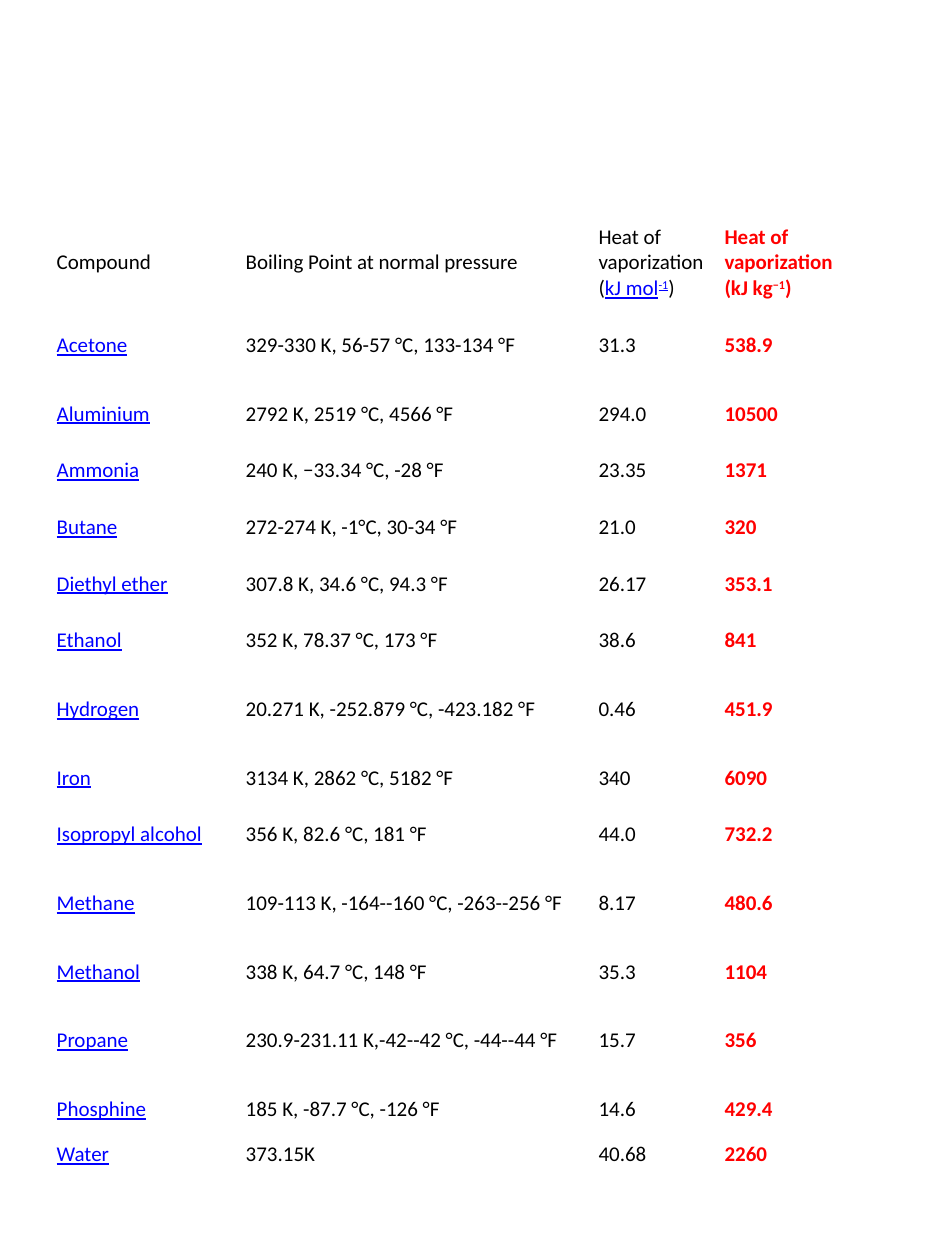
from copy import deepcopy

from pptx import Presentation
from pptx.dml.color import RGBColor
from pptx.enum.text import MSO_ANCHOR
from pptx.oxml.ns import qn
from pptx.util import Inches, Pt

COLORS = {"text": "000000", "link": "0000FF", "accent": "FF0000"}
COLUMNS = [15, 28, 10, 10]
TALL, MEDIUM, SHORT = 6.4, 4.5, 2.6
HEADER = [
    [("Compound", "text", False)],
    [("Boiling Point at normal pressure", "text", False)],
    [("Heat of vaporization\v(", "text", False), ("kJ mol", "link", False),
     ("-1", "link", True), (")", "text", False)],
    [("Heat of vaporization\v(kJ kg", "accent", False),
     ("−1", "accent", True), (")", "accent", False)],
]
COMPOUNDS = [
    (TALL, "Acetone", "329-330 K, 56-57 °C, 133-134 °F", "31.3", "538.9"),
    (MEDIUM, "Aluminium", "2792 K, 2519 °C, 4566 °F", "294.0", "10500"),
    (MEDIUM, "Ammonia", "240 K, −33.34 °C, -28 °F", "23.35", "1371"),
    (MEDIUM, "Butane", "272-274 K, -1°C, 30-34 °F", "21.0", "320"),
    (MEDIUM, "Diethyl ether", "307.8 K, 34.6 °C, 94.3 °F", "26.17", "353.1"),
    (MEDIUM, "Ethanol", "352 K, 78.37 °C, 173 °F", "38.6", "841"),
    (TALL, "Hydrogen", "20.271 K, -252.879 °C, -423.182 °F", "0.46", "451.9"),
    (MEDIUM, "Iron", "3134 K, 2862 °C, 5182 °F", "340", "6090"),
    (MEDIUM, "Isopropyl alcohol", "356 K, 82.6 °C, 181 °F", "44.0", "732.2"),
    (TALL, "Methane", "109-113 K, -164--160 °C, -263--256 °F", "8.17", "480.6"),
    (MEDIUM, "Methanol", "338 K, 64.7 °C, 148 °F", "35.3", "1104"),
    (TALL, "Propane", "230.9-231.11 K,-42--42 °C, -44--44 °F", "15.7", "356"),
    (MEDIUM, "Phosphine", "185 K, -87.7 °C, -126 °F", "14.6", "429.4"),
    (SHORT, "Water", "373.15K", "40.68", "2260"),
]


class Deck:
    """Holds the style and the current slide, on a grid of 75 columns by 100 rows."""

    def __init__(self, prs, font="Calibri", size=12):
        self.font, self.size = font, Pt(size)
        self.col, self.row = prs.slide_width / 75, prs.slide_height / 100
        self.s = prs.slides.add_slide(prs.slide_layouts[6])

    def table(self, x, y, columns, heights, rows):
        frame = self.s.shapes.add_table(
            len(rows), len(columns), int(x * self.col), int(y * self.row),
            int(sum(columns) * self.col), int(sum(heights) * self.row))
        table = frame.table
        table.first_row = table.horz_banding = False
        for column, width in zip(table.columns, columns):
            column.width = int(width * self.col)
        for row, height, contents in zip(table.rows, heights, rows):
            row.height = int(height * self.row)
            for cell, parts in zip(row.cells, contents):
                self.cell(cell, parts)

    def cell(self, cell, parts):
        cell.fill.background()
        cell.vertical_anchor = MSO_ANCHOR.MIDDLE
        cell.margin_left = cell.margin_right = Inches(0.06)
        cell.margin_top = cell.margin_bottom = Inches(0.03)
        p = cell.text_frame.paragraphs[0]
        for text, color, raised in parts:
            lines = text.split("\v")
            self.run(p, lines[0], color, raised)
            for line in lines[1:]:
                p.add_line_break()
                r = self.run(p, line, color, raised)
                br = p._p.findall(qn("a:br"))[-1]
                br.append(deepcopy(r._r.rPr))

    def run(self, p, text, color, raised):
        r = p.add_run()
        r.text = text
        r.font.name, r.font.size = self.font, self.size
        r.font.color.rgb = RGBColor.from_string(COLORS[color])
        r.font.bold = color == "accent"
        r.font.underline = color == "link"
        if raised:
            r._r.rPr.set("baseline", "30000")
        return r


def main():
    prs = Presentation()
    prs.slide_width, prs.slide_height = Inches(7.5), Inches(10)
    styles = ["link", "text", "text", "accent"]
    rows = [HEADER] + [
        [[(text, color, False)] for text, color in zip(values, styles)]
        for _, *values in COMPOUNDS]
    heights = [TALL] + [compound[0] for compound in COMPOUNDS]
    Deck(prs).table(3.9, 17.5, COLUMNS, heights, rows)
    prs.save("out.pptx")


if __name__ == "__main__":
    main()
